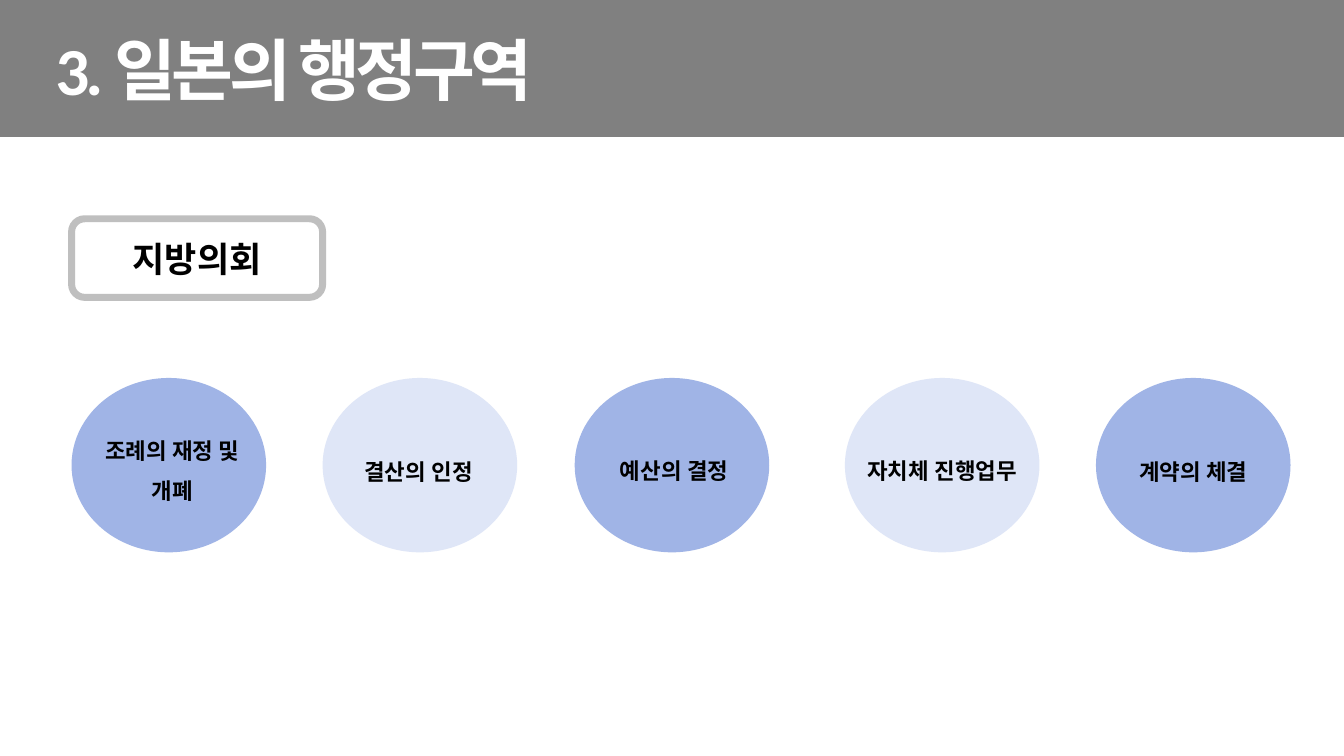
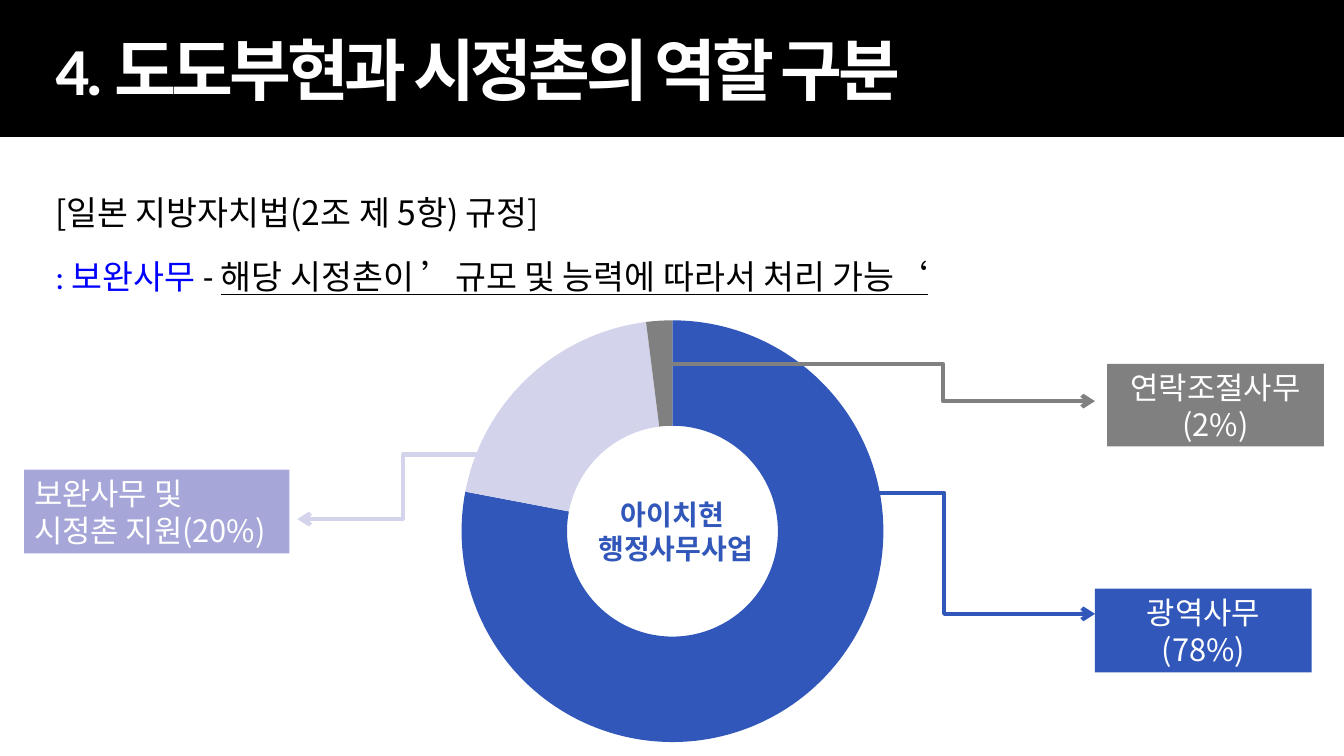
from dataclasses import dataclass
from typing import Optional, Sequence, Union

from lxml.etree import SubElement
from pptx import Presentation
from pptx.chart.data import CategoryChartData
from pptx.dml.color import RGBColor
from pptx.enum.chart import XL_CHART_TYPE as ChartType
from pptx.enum.shapes import MSO_CONNECTOR as Connector, MSO_SHAPE as Preset
from pptx.enum.text import MSO_ANCHOR as Anchor, PP_ALIGN as Align
from pptx.oxml.ns import qn
from pptx.util import Inches, Pt


@dataclass(frozen=True)
class Theme:
    latin: str = "Calibri"
    korean: str = "Noto Sans CJK KR"
    black: str = "000000"
    white: str = "FFFFFF"
    gray: str = "808080"
    frame_gray: str = "BFBFBF"
    blue: str = "3057B9"
    link_blue: str = "0000FF"
    circle_dark: str = "A0B4E6"
    circle_light: str = "DFE6F7"
    lavender: str = "D3D3EB"
    violet: str = "A6A7D8"
    title_size: int = 48
    heading_size: int = 25
    body_size: int = 24
    label_size: int = 22
    center_size: int = 20
    circle_size: int = 16
    chart_size: int = 12


THEME = Theme()


@dataclass(frozen=True)
class Box:
    left: float
    top: float
    width: float
    height: float

    def lengths(self) -> tuple:
        return tuple(Inches(n) for n in (self.left, self.top, self.width, self.height))


@dataclass(frozen=True)
class Span:
    text: str
    font: Optional[str] = None
    color: Optional[str] = None
    underline: bool = False


@dataclass(frozen=True)
class Duty:
    text: str
    left: float
    text_box: Box
    line_spacing: float = 1.6
    tracking: float = 0.1


@dataclass(frozen=True)
class Label:
    lines: tuple
    box: Box
    fill: str
    align: Align = Align.CENTER


@dataclass(frozen=True)
class Elbow:
    begin: tuple
    end: tuple
    color: str
    bend: float = 0.5


BAND = Box(0, 0, 13.33, 1.36)
DUTIES = (
    Duty("조례의 재정 및 개폐", 0.71, Box(0.85, 4.15, 1.72, 0.9), 1.5),
    Duty("결산의 인정", 3.2, Box(3.29, 4.34, 1.72, 0.52)),
    Duty(" 예산의 결정", 5.7, Box(5.8, 4.35, 1.72, 0.49), 1.5),
    Duty("자치체 진행업무", 8.38, Box(8.39, 4.33, 1.91, 0.52)),
    Duty("계약의 체결", 10.87, Box(10.88, 4.34, 1.91, 0.53), tracking=0),
)
SHARES = ((78, THEME.blue), (20, THEME.lavender), (2, THEME.gray))
ELBOWS = (
    Elbow((7.87, 4.89), (10.86, 6.09), THEME.blue),
    Elbow((6.61, 3.61), (10.86, 3.98), THEME.gray, 0.645),
    Elbow((5.05, 4.51), (2.95, 5.15), THEME.lavender),
)
LABELS = (
    Label(("보완사무 및", "시정촌 지원(20%)"), Box(0.24, 4.66, 2.63, 0.83), THEME.violet, Align.LEFT),
    Label(("연락조절사무", "(2%)"), Box(10.98, 3.61, 2.15, 0.82), THEME.gray),
    Label(("광역사무", "(78%)"), Box(10.86, 5.84, 2.15, 0.83), THEME.blue),
)


def rgb(color: str) -> RGBColor:
    return RGBColor.from_string(color)


def write_text(
    shape,
    lines: Sequence[Union[str, Sequence[Span]]],
    *,
    size: int,
    color: str = THEME.black,
    font: str = THEME.latin,
    bold: bool = False,
    align: Align = Align.LEFT,
    anchor: Anchor = Anchor.TOP,
    line_spacing: float = 1.0,
    tracking: float = 0,
    wrap: bool = True,
) -> None:
    frame = shape.text_frame
    frame.word_wrap = wrap
    frame.vertical_anchor = anchor
    for index, line in enumerate(lines):
        paragraph = frame.add_paragraph() if index else frame.paragraphs[0]
        paragraph.alignment = align
        paragraph.line_spacing = line_spacing
        for span in (Span(line),) if isinstance(line, str) else line:
            run = paragraph.add_run()
            run.text = span.text
            run.font.size = Pt(size)
            run.font.bold = bold
            run.font.underline = span.underline
            run.font.name = span.font or font
            run.font.color.rgb = rgb(span.color or color)
            properties = run.font._element
            SubElement(properties, qn("a:ea")).set("typeface", THEME.korean)
            if tracking:
                properties.set("spc", str(round(tracking * 100)))


def add_panel(
    shapes, preset: Preset, box: Box, fill: Optional[str] = None, line: Optional[str] = None, line_width: float = 1
):
    shape = shapes.add_shape(preset, *box.lengths())
    shape.shadow.inherit = False
    if fill:
        shape.fill.solid()
        shape.fill.fore_color.rgb = rgb(fill)
    else:
        shape.fill.background()
    if line:
        shape.line.color.rgb = rgb(line)
        shape.line.width = Pt(line_width)
    else:
        shape.line.fill.background()
    return shape


def add_titled_slide(presentation, title_text: str, title_width: float, band_color: str):
    slide = presentation.slides.add_slide(presentation.slide_layouts[5])
    title = slide.shapes.title
    band = add_panel(slide.shapes, Preset.RECTANGLE, BAND, band_color)
    title.element.addprevious(band.element)
    title.left, title.top, title.width, title.height = Box(0.45, 0.23, title_width, 0.9).lengths()
    write_text(
        title, (title_text,), size=THEME.title_size, color=THEME.white, bold=True, tracking=-3, wrap=False
    )
    return slide


def add_duty(slide, duty: Duty, fill: str) -> None:
    group = slide.shapes.add_group_shape()
    add_panel(group.shapes, Preset.OVAL, Box(duty.left, 3.75, 1.93, 1.73), fill)
    write_text(
        group.shapes.add_textbox(*duty.text_box.lengths()),
        (duty.text,),
        size=THEME.circle_size,
        bold=True,
        align=Align.CENTER,
        line_spacing=duty.line_spacing,
        tracking=duty.tracking,
    )


def add_elbow(slide, elbow: Elbow) -> None:
    ends = (Inches(n) for n in elbow.begin + elbow.end)
    connector = slide.shapes.add_connector(Connector.ELBOW, *ends)
    connector.line.color.rgb = rgb(elbow.color)
    connector.line.width = Pt(3)
    properties = connector.element.spPr
    SubElement(properties.find(qn("a:ln")), qn("a:tailEnd")).set("type", "arrow")
    SubElement(properties, qn("a:effectLst"))
    guide = SubElement(properties.find(qn("a:prstGeom")).find(qn("a:avLst")), qn("a:gd"))
    guide.set("name", "adj1")
    guide.set("fmla", f"val {round(elbow.bend * 100000)}")


def add_share_chart(slide, box: Box) -> None:
    data = CategoryChartData()
    data.categories = [str(number + 1) for number in range(len(SHARES))]
    data.add_series("Series 1", [value for value, _ in SHARES])
    chart = slide.shapes.add_chart(ChartType.DOUGHNUT, *box.lengths(), data).chart
    chart.has_title = False
    chart.has_legend = False
    chart.font.size = Pt(THEME.chart_size)
    chart.font.name = THEME.latin
    chart.font.color.rgb = rgb(THEME.black)
    for index, (_, color) in enumerate(SHARES):
        point = chart.plots[0].series[0].points[index]
        point.format.fill.solid()
        point.format.fill.fore_color.rgb = rgb(color)
        point.format.line.fill.background()


def build_council_slide(presentation) -> None:
    slide = add_titled_slide(presentation, "3. 일본의 행정구역", 5.24, THEME.gray)
    for index, duty in enumerate(DUTIES):
        add_duty(slide, duty, THEME.circle_light if index % 2 else THEME.circle_dark)
    heading = add_panel(
        slide.shapes, Preset.ROUNDED_RECTANGLE, Box(0.71, 2.17, 2.49, 0.78), line=THEME.frame_gray, line_width=5
    )
    write_text(
        heading, ("지방의회",), size=THEME.heading_size, bold=True, align=Align.CENTER, anchor=Anchor.MIDDLE
    )


def build_roles_slide(presentation) -> None:
    slide = add_titled_slide(presentation, "4. 도도부현과 시정촌의 역할 구분", 9.21, THEME.black)
    write_text(
        slide.shapes.add_textbox(*Box(0.45, 1.61, 12.57, 1.91).lengths()),
        (
            (Span("[일본 지방자치법(2조 제 5항) 규정]", THEME.korean),),
            (
                Span(": 보완사무 ", color=THEME.link_blue),
                Span("- "),
                Span("해당 시정촌이 ’규모 및 능력에 따라서 처리 가능‘", underline=True),
            ),
        ),
        size=THEME.body_size,
        align=Align.JUSTIFY,
        line_spacing=1.6,
    )
    add_share_chart(slide, Box(3.41, 3.04, 6.52, 4.46))
    write_text(
        slide.shapes.add_textbox(*Box(5.64, 4.89, 2.06, 0.77).lengths()),
        ("아이치현", " 행정사무사업"),
        size=THEME.center_size,
        color=THEME.blue,
        bold=True,
        align=Align.CENTER,
    )
    for elbow in ELBOWS:
        add_elbow(slide, elbow)
    for label in LABELS:
        write_text(
            add_panel(slide.shapes, Preset.RECTANGLE, label.box, label.fill),
            label.lines,
            size=THEME.label_size,
            color=THEME.white,
            font=THEME.korean,
            align=label.align,
        )


def main() -> None:
    presentation = Presentation()
    presentation.slide_width = Inches(13.33)
    presentation.slide_height = Inches(7.5)
    build_council_slide(presentation)
    build_roles_slide(presentation)
    presentation.save("out.pptx")


if __name__ == "__main__":
    main()
